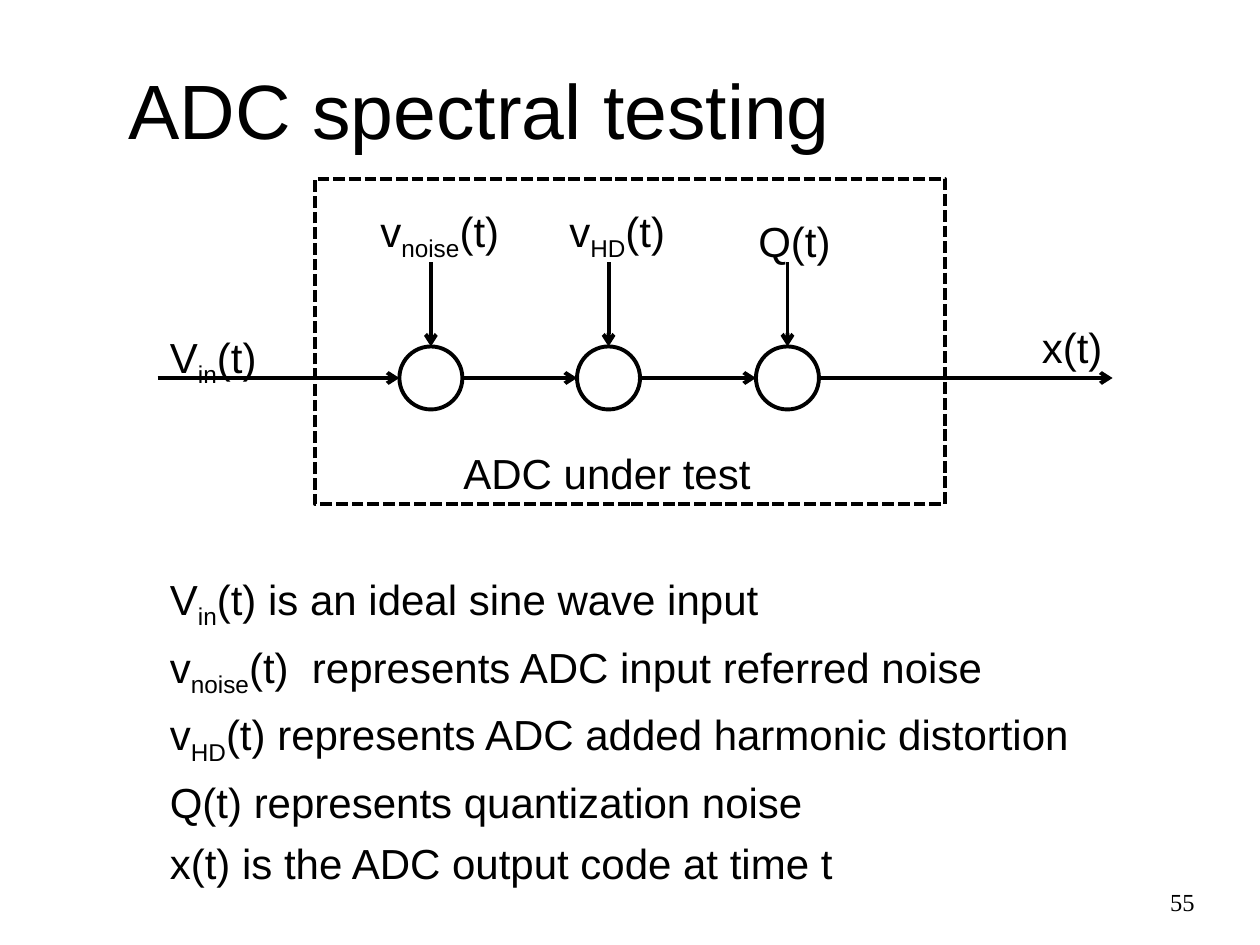
from dataclasses import dataclass

from lxml import etree
from pptx import Presentation
from pptx.dml.color import RGBColor
from pptx.enum import dml, shapes, text
from pptx.oxml import ns
from pptx.util import Inches, Pt


@dataclass(frozen=True)
class Theme:
    ink: RGBColor = RGBColor(0, 0, 0)
    sans: str = "Arial"
    serif: str = "Times New Roman"
    title: Pt = Pt(44)
    body: Pt = Pt(24)
    number: Pt = Pt(14)
    line: Pt = Pt(2.25)
    gap: Pt = Pt(6)


THEME = Theme()
AXIS_Y = 3
RADIUS = 0.25
NODE_X = (3.42, 4.83, 6.25)

# Text between bars is set as a subscript
LABELS = (
    ("V|in|(t)", 1.25, 2.58, 0.91),
    ("v|noise|(t)", 2.92, 1.58, 1.22),
    ("v|HD|(t)", 4.42, 1.58, 1.01),
    ("Q(t)", 5.92, 1.66, 0.78),
    ("x(t)", 8.17, 2.5, 0.69),
    ("ADC under test", 3.58, 3.5, 2.5),
)
NOTES = (
    "V|in|(t) is an ideal sine wave input",
    "v|noise|(t)  represents ADC input referred noise",
    "v|HD|(t) represents ADC added harmonic distortion",
    "Q(t) represents quantization noise",
    "x(t) is the ADC output code at time t",
)


def apply(target, formats):
    for name, value in formats.items():
        setattr(target, name, value)


def write(p, content, size, font=THEME.sans):
    for i, part in enumerate(content.split("|")):
        r = p.add_run()
        r.text = part
        apply(r.font, {"size": size, "name": font})
        r.font.color.rgb = THEME.ink
        if i % 2:
            r.font._element.set("baseline", "-25000")


def add_title(s, content):
    sp = s.shapes.title
    apply(sp, {"left": Inches(0.92), "top": Inches(0.38),
               "width": Inches(8.5), "height": Inches(0.96)})
    sp.text_frame.vertical_anchor = text.MSO_ANCHOR.MIDDLE
    p = sp.text_frame.paragraphs[0]
    p.alignment = text.PP_ALIGN.LEFT
    write(p, content, THEME.title)


def add_text(s, lines, x, y, w, h=0.51, gap=None):
    sp = s.shapes.add_textbox(Inches(x), Inches(y), Inches(w), Inches(h))
    tf = sp.text_frame
    apply(tf, {"word_wrap": False, "auto_size": text.MSO_AUTO_SIZE.SHAPE_TO_FIT_TEXT})
    for i, line in enumerate(lines):
        p = tf.add_paragraph() if i else tf.paragraphs[0]
        p.space_after = gap
        write(p, line, THEME.body)


def add_number(s, content):
    sp = s.shapes.add_textbox(Inches(7.5), Inches(6.91), Inches(2.08), Inches(0.5))
    apply(sp.text_frame, {"word_wrap": True, "vertical_anchor": text.MSO_ANCHOR.MIDDLE})
    p = sp.text_frame.paragraphs[0]
    p.alignment = text.PP_ALIGN.RIGHT
    write(p, content, THEME.number, THEME.serif)


def style_line(line):
    line.color.rgb = THEME.ink
    line.width = THEME.line


def add_outline(s, kind, x, y, w, h, dash=None):
    sp = s.shapes.add_shape(kind, Inches(x), Inches(y), Inches(w), Inches(h))
    sp.shadow.inherit = False
    sp.fill.background()
    style_line(sp.line)
    sp.line.dash_style = dash


def add_arrow(s, x1, y1, x2, y2):
    c = s.shapes.add_connector(shapes.MSO_CONNECTOR.STRAIGHT,
                               Inches(x1), Inches(y1), Inches(x2), Inches(y2))
    style_line(c.line)
    etree.SubElement(c.line._get_or_add_ln(), ns.qn("a:tailEnd"), type="arrow")
    etree.SubElement(c._element.spPr, ns.qn("a:effectLst"))


def add_signal_chain(s):
    # Summing nodes, each fed from above
    for x in NODE_X:
        add_outline(s, shapes.MSO_SHAPE.OVAL, x - RADIUS, AXIS_Y - RADIUS,
                    2 * RADIUS, 2 * RADIUS)
        add_arrow(s, x, 2.08, x, AXIS_Y - RADIUS)

    # Signal path from input to output
    starts = [1.25] + [x + RADIUS for x in NODE_X]
    ends = [x - RADIUS for x in NODE_X] + [8.83]
    for start, end in zip(starts, ends):
        add_arrow(s, start, AXIS_Y, end, AXIS_Y)

    # Boundary of the converter
    add_outline(s, shapes.MSO_SHAPE.RECTANGLE, 2.5, 1.42, 5, 2.58,
                dml.MSO_LINE.SQUARE_DOT)

    for label, x, y, w in LABELS:
        add_text(s, [label], x, y, w)


def main():
    prs = Presentation()
    apply(prs, {"slide_width": Inches(10), "slide_height": Inches(7.5)})
    s = prs.slides.add_slide(prs.slide_layouts.get_by_name("Title Only"))
    add_title(s, "ADC spectral testing")
    add_number(s, "55")
    add_signal_chain(s)
    add_text(s, NOTES, 1.25, 4.5, 7.47, 2.46, THEME.gap)
    prs.save("out.pptx")


if __name__ == "__main__":
    main()
